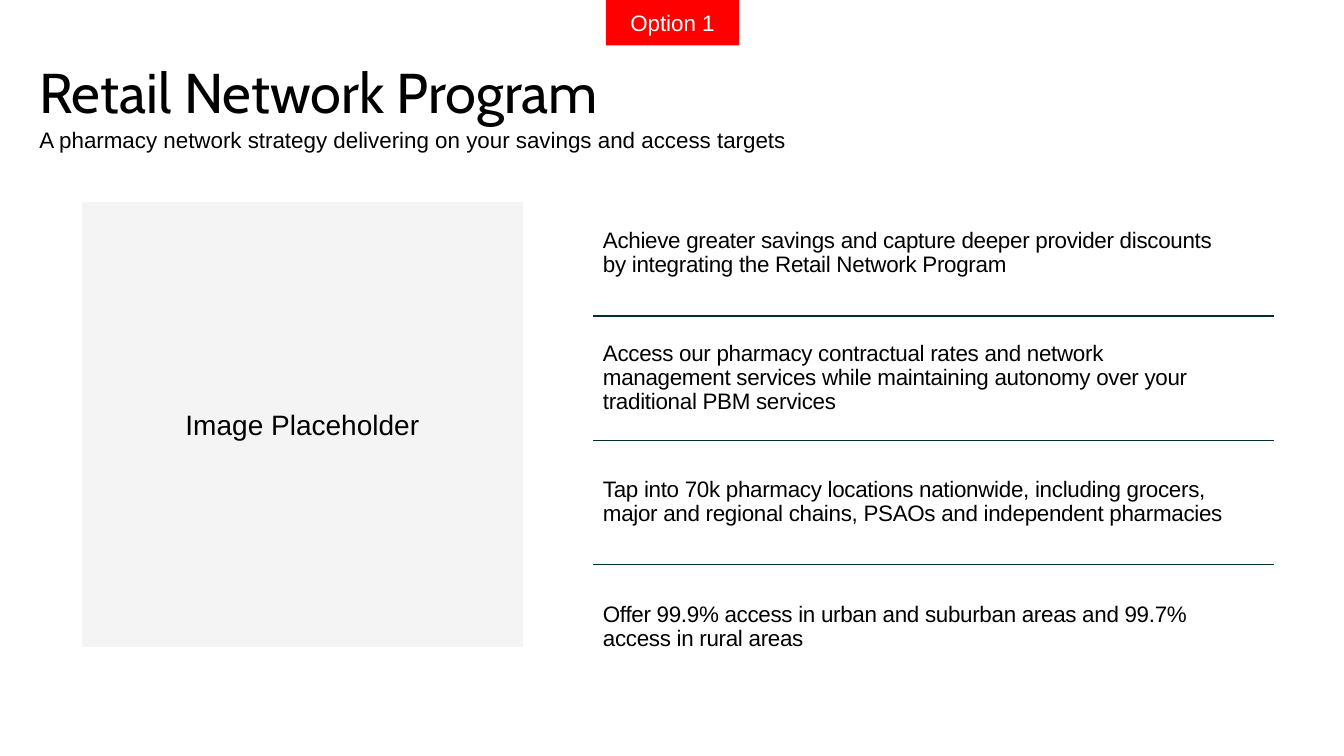
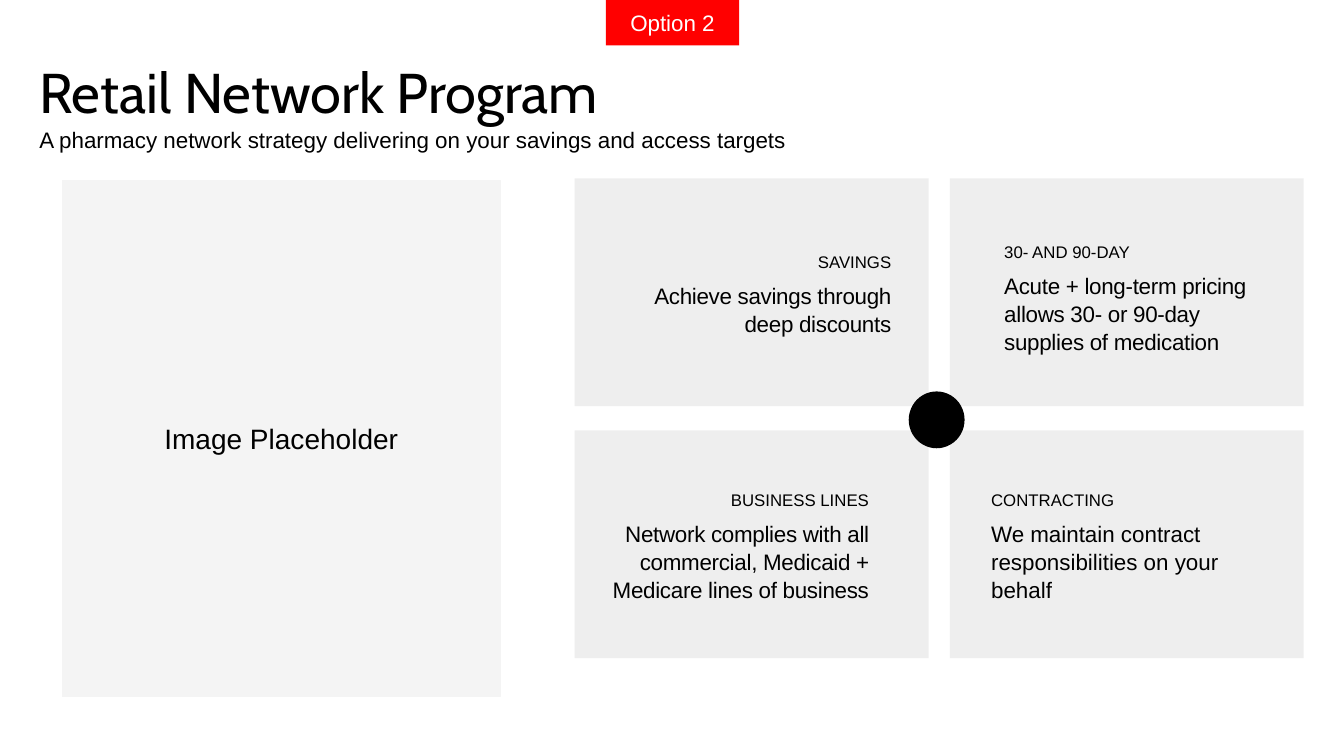
from dataclasses import dataclass

from lxml import etree
from pptx import Presentation
from pptx.dml.color import RGBColor
from pptx.enum.shapes import MSO_SHAPE
from pptx.enum.text import MSO_ANCHOR, PP_ALIGN
from pptx.oxml.ns import qn
from pptx.shapes.autoshape import Shape
from pptx.slide import Slide
from pptx.table import _Cell
from pptx.text.text import TextFrame, _Paragraph
from pptx.util import Inches, Pt

RECTANGLE, OVAL = MSO_SHAPE.RECTANGLE, MSO_SHAPE.OVAL
LEFT, CENTER, RIGHT = PP_ALIGN.LEFT, PP_ALIGN.CENTER, PP_ALIGN.RIGHT
MIDDLE = MSO_ANCHOR.MIDDLE

BLACK = RGBColor(0x00, 0x00, 0x00)
WHITE = RGBColor(0xFF, 0xFF, 0xFF)
RED = RGBColor(0xFF, 0x00, 0x00)
PLACEHOLDER_GRAY = RGBColor(0xF4, 0xF4, 0xF4)
CARD_GRAY = RGBColor(0xEA, 0xEA, 0xEA)
RULE_GREEN = RGBColor(0x00, 0x2F, 0x32)

TITLE_FONT, BODY_FONT = "Cabin", "Arial"
TITLE = "Retail Network Program"
SUBTITLE = "A pharmacy network strategy delivering on your savings and access targets"
TIGHT = -20  # character spacing in hundredths of a point


@dataclass(frozen=True)
class Box:
    left: float
    top: float
    width: float
    height: float

    def lengths(self) -> tuple[int, int, int, int]:
        return Inches(self.left), Inches(self.top), Inches(self.width), Inches(self.height)


@dataclass(frozen=True)
class Card:
    heading: str
    body: str
    text_box: Box
    align: PP_ALIGN
    spacing: int = TIGHT


BENEFITS = [
    "Achieve greater savings and capture deeper provider discounts by integrating "
    "the Retail Network Program",
    "Access our pharmacy contractual rates and network management services while "
    "maintaining autonomy over your traditional PBM services",
    "Tap into 70k pharmacy locations nationwide, including grocers, major and "
    "regional chains, PSAOs and independent pharmacies",
    "Offer 99.9% access in urban and suburban areas and 99.7% access in rural areas",
]

CARDS = [
    Card("SAVINGS", "Achieve savings through deep discounts",
         Box(6.15, 2.19, 3.19, 2.1), RIGHT),
    Card("30- AND 90-DAY",
         "Acute + long-term pricing allows 30- or 90-day supplies of medication",
         Box(9.36, 2.09, 3.58, 2.1), LEFT),
    Card("BUSINESS LINES",
         "Network complies with all commercial, Medicaid + Medicare lines of business",
         Box(5.65, 4.55, 3.47, 2.1), RIGHT),
    Card("CONTRACTING", "We maintain contract responsibilities on your behalf",
         Box(9.23, 4.55, 3.38, 2.1), LEFT, 0),
]


# Text helpers
def write(paragraph: _Paragraph, text: str, size: float, color: RGBColor = BLACK,
          font: str = BODY_FONT, align: PP_ALIGN = LEFT, spacing: int = 0) -> None:
    run = paragraph.add_run()
    run.text = text
    if spacing:
        run._r.get_or_add_rPr().set("spc", str(spacing))
    paragraph.alignment = align
    paragraph.font.size = Pt(size)
    paragraph.font.name = font
    paragraph.font.color.rgb = color


def set_margins(target: TextFrame | _Cell, left: float, top: float,
                right: float, bottom: float) -> None:
    target.margin_left, target.margin_top = Inches(left), Inches(top)
    target.margin_right, target.margin_bottom = Inches(right), Inches(bottom)


def add_text_frame(slide: Slide, box: Box, left: float = 0, top: float = 0,
                   right: float = 0, bottom: float = 0) -> TextFrame:
    frame = slide.shapes.add_textbox(*box.lengths()).text_frame
    frame.word_wrap = True
    set_margins(frame, left, top, right, bottom)
    return frame


# Shape helpers
def add_block(slide: Slide, box: Box, fill: RGBColor, kind: MSO_SHAPE = RECTANGLE,
              outlined: bool = False) -> Shape:
    shape = slide.shapes.add_shape(kind, *box.lengths())
    shape.shadow.inherit = False
    shape.fill.solid()
    shape.fill.fore_color.rgb = fill
    if outlined:
        shape.line.color.rgb = fill
        shape.line.width = Pt(1)
    else:
        shape.line.fill.background()
    return shape


def add_label_block(slide: Slide, box: Box, fill: RGBColor, text: str, size: float,
                    color: RGBColor, outlined: bool = False) -> None:
    frame = add_block(slide, box, fill, outlined=outlined).text_frame
    set_margins(frame, 0, 0, 0, 0)
    frame.vertical_anchor = MIDDLE
    write(frame.paragraphs[0], text, size, color, align=CENTER)


def add_image_placeholder(slide: Slide, box: Box) -> None:
    add_label_block(slide, box, PLACEHOLDER_GRAY, "Image Placeholder", 20, BLACK, True)


def set_transparent(shape: Shape, opacity: int) -> None:
    color = shape._element.spPr.find(qn("a:solidFill"))[0]
    etree.SubElement(color, qn("a:alpha"), val=str(opacity * 1000))


def set_border(cell: _Cell, sides: dict[str, bool]) -> None:
    properties = cell._tc.get_or_add_tcPr()
    for position, (side, visible) in enumerate(sides.items()):
        line = etree.Element(qn(f"a:{side}"), w=str(Pt(1)))
        if visible:
            fill = etree.SubElement(line, qn("a:solidFill"))
            etree.SubElement(fill, qn("a:srgbClr"), val=str(RULE_GREEN))
        else:
            etree.SubElement(line, qn("a:noFill"))
        properties.insert(position, line)


# Parts shared by both slides
def add_option_slide(presentation: Presentation, option: int) -> Slide:
    slide = presentation.slides.add_slide(presentation.slide_layouts[6])
    title = add_text_frame(slide, Box(0.39, 0.57, 8.3, 1.1))
    write(title.paragraphs[0], TITLE, 40, font=TITLE_FONT)
    subtitle = add_text_frame(slide, Box(0.39, 1.2, 12.55, 0.37), top=0.05, bottom=0.05)
    write(subtitle.paragraphs[0], SUBTITLE, 16)
    add_label_block(slide, Box(6.01, 0, 1.32, 0.45), RED, f"Option {option}", 16, WHITE)
    return slide


# Option 1: ruled list of benefits
def add_benefit_table(slide: Slide) -> None:
    box = Box(5.88, 1.9, 6.76, 4.94)
    table = slide.shapes.add_table(len(BENEFITS), 1, *box.lengths()).table
    table.first_row = table.horz_banding = False
    last = len(BENEFITS) - 1
    for row, benefit in enumerate(BENEFITS):
        cell = table.cell(row, 0)
        cell.fill.background()
        cell.vertical_anchor = MIDDLE
        set_margins(cell, 0.1, 0.05, 0.4, 0.05)
        set_border(cell, {"lnL": False, "lnR": False, "lnT": row > 0, "lnB": row < last})
        paragraph = cell.text_frame.paragraphs[0]
        paragraph.line_spacing = 0.96
        write(paragraph, benefit, 16, spacing=TIGHT)


# Option 2: grid of four cards
def add_card_grid(slide: Slide) -> None:
    for index, card in enumerate(CARDS):
        row, column = divmod(index, 2)
        background = Box(5.7 + 3.72 * column, 1.77 + 2.5 * row, 3.51, 2.26)
        set_transparent(add_block(slide, background, CARD_GRAY), 80)
        left, right = (0.3, 0.5) if card.align == RIGHT else (0.6, 0.3)
        frame = add_text_frame(slide, card.text_box, left, 0.3, right, 0.2)
        heading, body = frame.paragraphs[0], frame.add_paragraph()
        for paragraph in (heading, body):
            paragraph.space_after = Pt(6)
            paragraph.line_spacing = 1.05
        write(heading, card.heading, 12, align=card.align)
        write(body, card.body, 16, align=card.align, spacing=card.spacing)


def main() -> None:
    presentation = Presentation()
    presentation.slide_width, presentation.slide_height = Inches(13.33), Inches(7.5)

    slide = add_option_slide(presentation, 1)
    add_benefit_table(slide)
    add_image_placeholder(slide, Box(0.82, 2.01, 4.36, 4.4))

    slide = add_option_slide(presentation, 2)
    add_card_grid(slide)
    add_image_placeholder(slide, Box(0.62, 1.79, 4.34, 5.12))
    add_block(slide, Box(9.02, 3.89, 0.54, 0.55), BLACK, OVAL, outlined=True)

    presentation.save("out.pptx")


if __name__ == "__main__":
    main()
